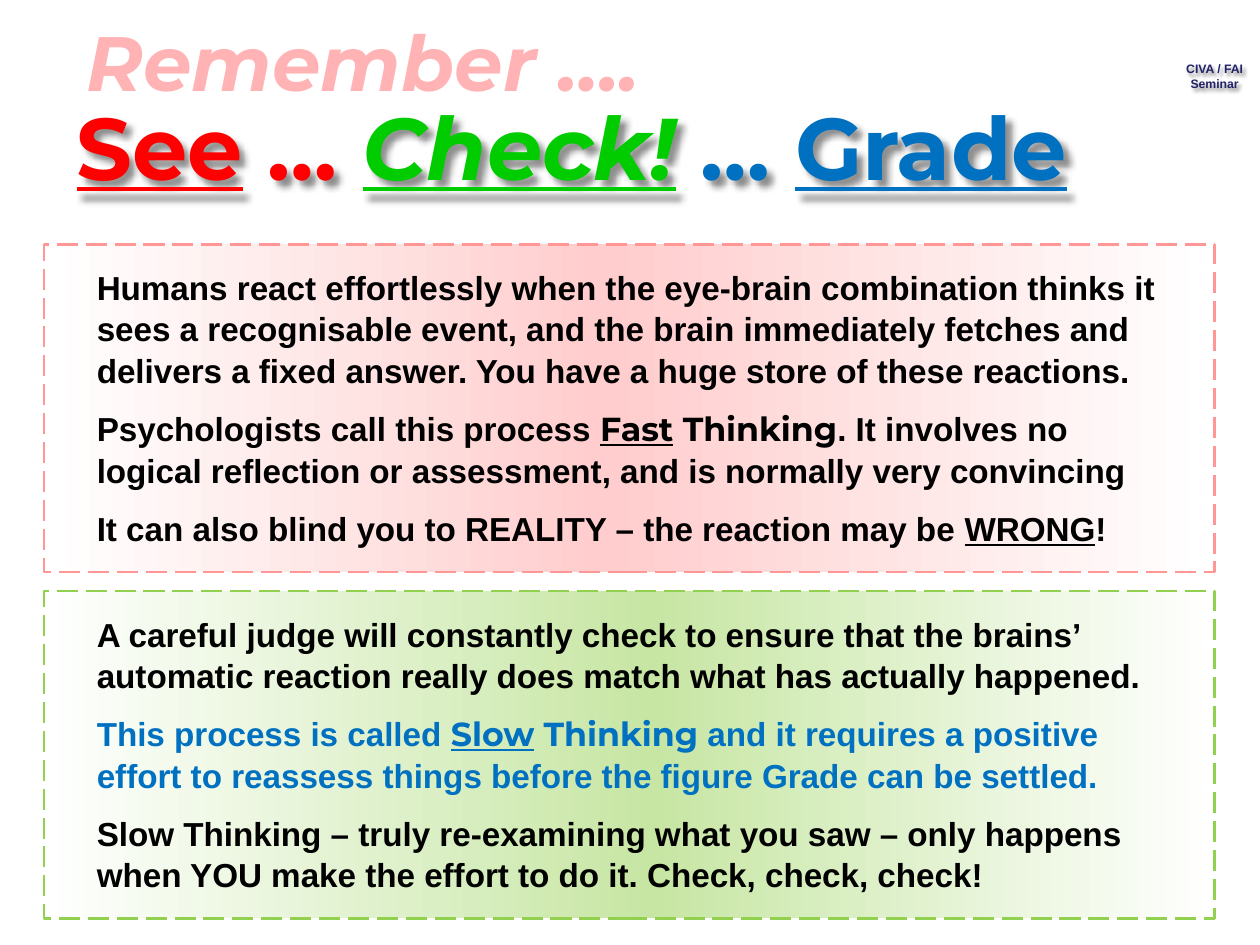
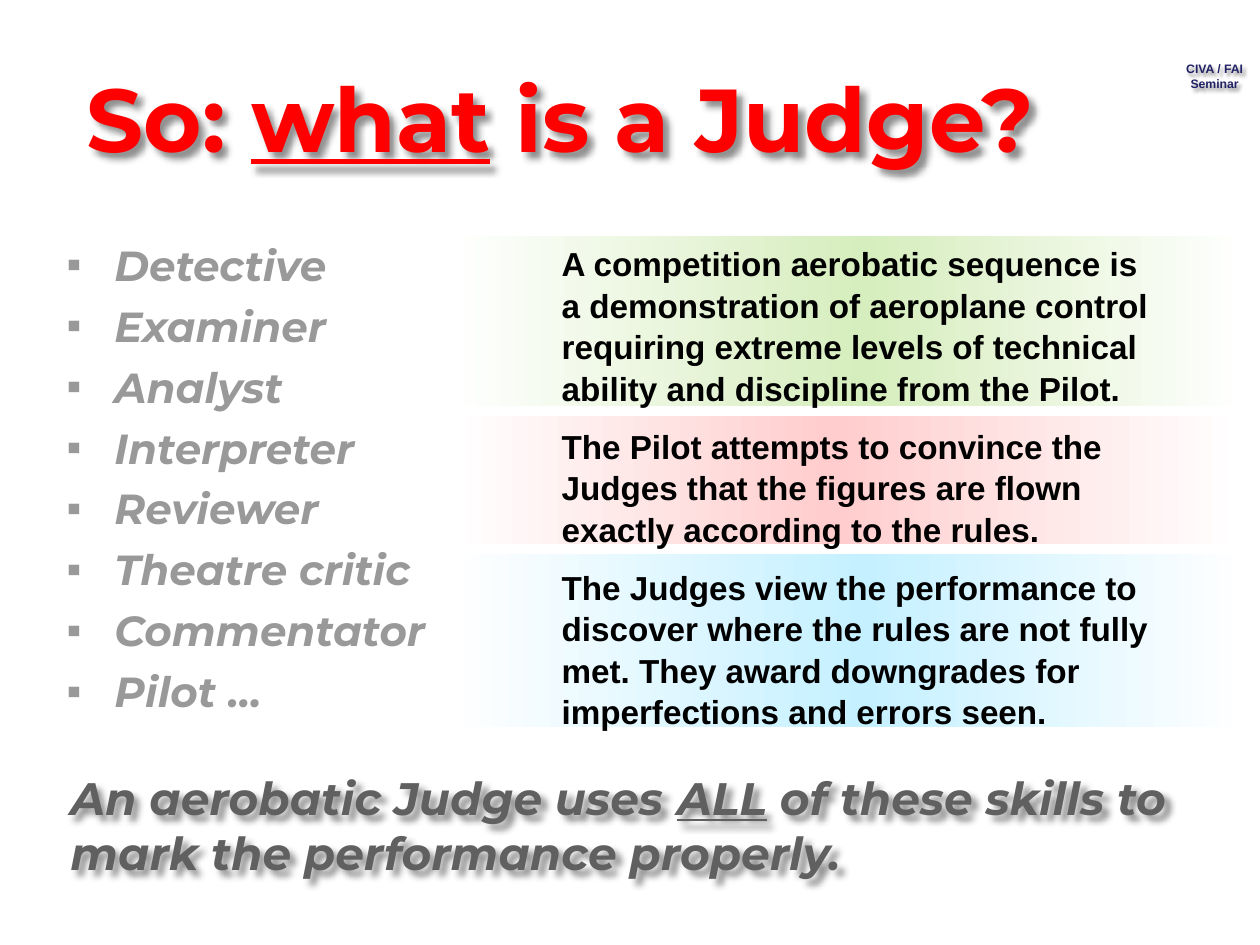
from dataclasses import dataclass

from lxml.etree import SubElement
from pptx import Presentation
from pptx.dml.color import RGBColor
from pptx.enum.dml import MSO_LINE
from pptx.enum.shapes import MSO_SHAPE
from pptx.enum.text import MSO_ANCHOR, MSO_AUTO_SIZE, PP_ALIGN
from pptx.oxml.ns import qn
from pptx.util import Inches, Pt


@dataclass(frozen=True)
class Theme:
    heading: str = "Montserrat"
    body: str = "Arial"
    title_size: float = 50
    long_title_size: float = 51
    lead_size: float = 44
    closing_size: float = 26
    list_size: float = 24
    body_size: float = 19
    mark_size: float = 7
    body_spacing: float = 1.04
    black: str = "000000"
    white: str = "FFFFFF"
    red: str = "FF0000"
    green: str = "00CC00"
    blue: str = "0070C0"
    navy: str = "222267"
    pale_red: str = "FFB3B5"
    dark_grey: str = "606060"
    light_grey: str = "999999"
    shadow: str = "000000"
    red_tint: str = "FFCDCD"
    red_edge: str = "FF9797"
    green_tint: str = "C7E6A4"
    soft_green_tint: str = "D6EDBD"
    green_edge: str = "92D050"
    blue_tint: str = "C5F0FF"


THEME = Theme()


# ---- Shared helpers ----
def place(part, box):
    part.left, part.top, part.width, part.height = (Inches(v) for v in box)


def cast_shadow(part, blur=4, distance=4):
    """Soft shadow to the lower right of the unfilled part's text."""
    effects = SubElement(part._element.spPr, qn("a:effectLst"))
    outer = SubElement(effects, qn("a:outerShdw"), blurRad=str(Pt(blur)),
                       dist=str(Pt(distance)), dir="2700000", algn="tl", rotWithShape="0")
    colour = SubElement(outer, qn("a:srgbClr"), val=THEME.shadow)
    SubElement(colour, qn("a:alpha"), val="43000")


def write(paragraph, pieces, font, size, colour, italic=False):
    """Each piece is a string, or a pair of a string and what differs in it."""
    for piece in pieces:
        words, changes = (piece, {}) if isinstance(piece, str) else piece
        run = paragraph.add_run()
        run.text = words
        run.font.name = changes.get("font", font)
        run.font.size = Pt(size)
        run.font.bold = True
        run.font.italic = changes.get("italic", italic)
        run.font.underline = changes.get("underline", False)
        run.font.color.rgb = RGBColor.from_string(changes.get("colour", colour))


def add_text(slide, box, paragraphs, font, size, colour, italic=False, gap=0,
             spacing=None, anchor=MSO_ANCHOR.TOP, align=PP_ALIGN.LEFT, wrap=True,
             bullet=None):
    text = slide.shapes.add_textbox(*(Inches(v) for v in box))
    frame = text.text_frame
    frame.word_wrap = wrap
    frame.vertical_anchor = anchor
    for index, pieces in enumerate(paragraphs):
        paragraph = frame.add_paragraph() if index else frame.paragraphs[0]
        paragraph.alignment = align
        if spacing:
            paragraph.line_spacing = spacing
        if index and gap:
            paragraph.space_before = Pt(gap)
        if bullet:
            hang = Inches(0.38)
            properties = paragraph._p.get_or_add_pPr()
            properties.set("marL", str(hang))
            properties.set("indent", str(-hang))
            SubElement(properties, qn("a:buFont"), typeface=THEME.body)
            SubElement(properties, qn("a:buChar"), char=bullet)
        write(paragraph, pieces, font, size, colour, italic)
    return text


def add_body(slide, box, paragraphs):
    return add_text(slide, box, paragraphs, THEME.body, THEME.body_size, THEME.black,
                    gap=THEME.body_size / 2, spacing=THEME.body_spacing)


def add_title(slide, box, pieces, size):
    title = slide.shapes.title
    place(title, box)
    frame = title.text_frame
    frame.word_wrap = True
    frame.auto_size = MSO_AUTO_SIZE.NONE
    frame.vertical_anchor = MSO_ANCHOR.MIDDLE
    frame.paragraphs[0].alignment = PP_ALIGN.LEFT
    write(frame.paragraphs[0], pieces, THEME.heading, size, THEME.red)
    cast_shadow(title)


def add_glow_band(slide, box, tint, peak, edge=None):
    """Rectangle that fades from a tinted middle to white at both sides."""
    band = slide.shapes.add_shape(MSO_SHAPE.RECTANGLE, *(Inches(v) for v in box))
    band.shadow.inherit = False
    band.fill.gradient()
    band.fill.gradient_angle = 180
    stops = band._element.spPr.find(qn("a:gradFill")).find(qn("a:gsLst"))
    for stop in list(stops):
        stops.remove(stop)
    for position, colour in ((0, THEME.white), (peak, tint), (100, THEME.white)):
        stop = SubElement(stops, qn("a:gs"), pos=str(position * 1000))
        SubElement(stop, qn("a:srgbClr"), val=colour)
    if edge:
        band.line.color.rgb = RGBColor.from_string(edge)
        band.line.width = Pt(1.5)
        band.line.dash_style = MSO_LINE.LONG_DASH
    else:
        band.line.fill.background()


def add_seminar_mark(slide):
    """Corner mark, moved to the layout so that every slide shows it."""
    mark = add_text(slide, (9.3, 0.44, 0.68, 0.34), [["CIVA / FAI"], ["Seminar"]],
                    THEME.body, THEME.mark_size, THEME.navy,
                    align=PP_ALIGN.CENTER, wrap=False)
    cast_shadow(mark, blur=2, distance=2)
    slide.slide_layout.shapes._spTree.append(mark._element)


# ---- Slide 1: fast and slow thinking ----
def add_thinking_panel(slide, box, tint, peak, edge, paragraphs):
    left, top, width, height = box
    add_glow_band(slide, box, tint, peak, edge)
    add_body(slide, (left + 0.32, top + 0.12, width - 0.63, height - 0.2), paragraphs)


def build_thinking_slide(slide):
    # Headings
    add_title(slide, (0.51, 0.53, 9, 1.25), [
        ("See", {"underline": True}),
        " … ",
        ("Check!", {"colour": THEME.green, "italic": True, "underline": True}),
        (" … ", {"colour": THEME.blue}),
        ("Grade", {"colour": THEME.blue, "underline": True}),
    ], THEME.title_size)
    add_text(slide, (0.59, 0.13, 5.43, 0.71), [["Remember …."]], THEME.heading,
             THEME.lead_size, THEME.pale_red, italic=True, anchor=MSO_ANCHOR.MIDDLE)

    # Panels
    key_word = {"font": THEME.heading}
    blue_text = {"colour": THEME.blue}
    fast = [
        ["Humans react effortlessly when the eye-brain combination thinks it sees a "
         "recognisable event, and the brain immediately fetches and delivers a fixed "
         "answer. You have a huge store of these reactions."],
        ["Psychologists call this process ",
         ("Fast", key_word | {"underline": True}), (" Thinking", key_word),
         ". It involves no logical reflection or assessment, and is normally very "
         "convincing"],
        ["It can also blind you to REALITY – the reaction may be ",
         ("WRONG", {"underline": True}), "!"],
    ]
    slow = [
        ["A careful judge will constantly check to ensure that the brains’ automatic "
         "reaction really does match what has actually happened."],
        [("This process is called ", blue_text),
         ("Slow", key_word | blue_text | {"underline": True}),
         (" Thinking", key_word | blue_text),
         (" and it requires a positive effort to reassess things before the figure "
          "Grade can be settled.", blue_text)],
        ["Slow Thinking – truly re-examining what you saw – only happens when YOU make "
         "the effort to do it. Check, check, check!"],
    ]
    panels = [(THEME.red_tint, 52, THEME.red_edge, fast),
              (THEME.green_tint, 48, THEME.green_edge, slow)]
    for row, panel in enumerate(panels):
        add_thinking_panel(slide, (0.35, 1.94 + row * 2.75, 9.29, 2.6), *panel)


# ---- Slide 2: what a judge is ----
def add_role_list(slide, box):
    roles = ["Detective", "Examiner", "Analyst", "Interpreter", "Reviewer",
             "Theatre critic", "Commentator", "Pilot …"]
    add_text(slide, box, [[role] for role in roles], THEME.heading, THEME.list_size,
             THEME.light_grey, italic=True, gap=6, bullet="▪")


def add_explanation(slide, box):
    left, top, width, height = box
    bands = [(1.35, THEME.soft_green_tint, 48),
             (1.02, THEME.red_tint, 52),
             (1.37, THEME.blue_tint, 48)]
    band_top = top
    for band_height, tint, peak in bands:
        add_glow_band(slide, (left, band_top, width, band_height), tint, peak)
        band_top += band_height + 0.08
    add_body(slide, (left + 0.78, top, width - 1.33, height), [
        ["A competition aerobatic sequence is a demonstration of aeroplane control "
         "requiring extreme levels of technical ability and discipline from the Pilot."],
        ["The Pilot attempts to convince the Judges that the figures are flown exactly "
         "according to the rules."],
        ["The Judges view the performance to discover where the rules are not fully "
         "met. They award downgrades for imperfections and errors seen."],
    ])


def build_judge_slide(slide):
    add_title(slide, (0.59, 0.3, 9.29, 1.25),
              ["So: ", ("what", {"underline": True}), " is a Judge?"],
              THEME.long_title_size)
    add_explanation(slide, (3.58, 1.87, 6.3, 3.9))

    # Closing statement
    closing = add_text(slide, (0.46, 6.19, 9.29, 0.71), [[
        "An aerobatic Judge uses ", ("ALL", {"underline": True}),
        " of these skills to mark the performance properly.",
    ]], THEME.heading, THEME.closing_size, THEME.dark_grey, italic=True,
        anchor=MSO_ANCHOR.MIDDLE)
    cast_shadow(closing)

    add_role_list(slide, (0.43, 1.85, 3.31, 3.95))


def main():
    deck = Presentation()
    deck.slide_width, deck.slide_height = Inches(10), Inches(7.5)
    title_only = deck.slide_layouts[5]
    slides = [deck.slides.add_slide(title_only) for _ in range(2)]
    add_seminar_mark(slides[0])
    build_thinking_slide(slides[0])
    build_judge_slide(slides[1])
    deck.save("out.pptx")


if __name__ == "__main__":
    main()
